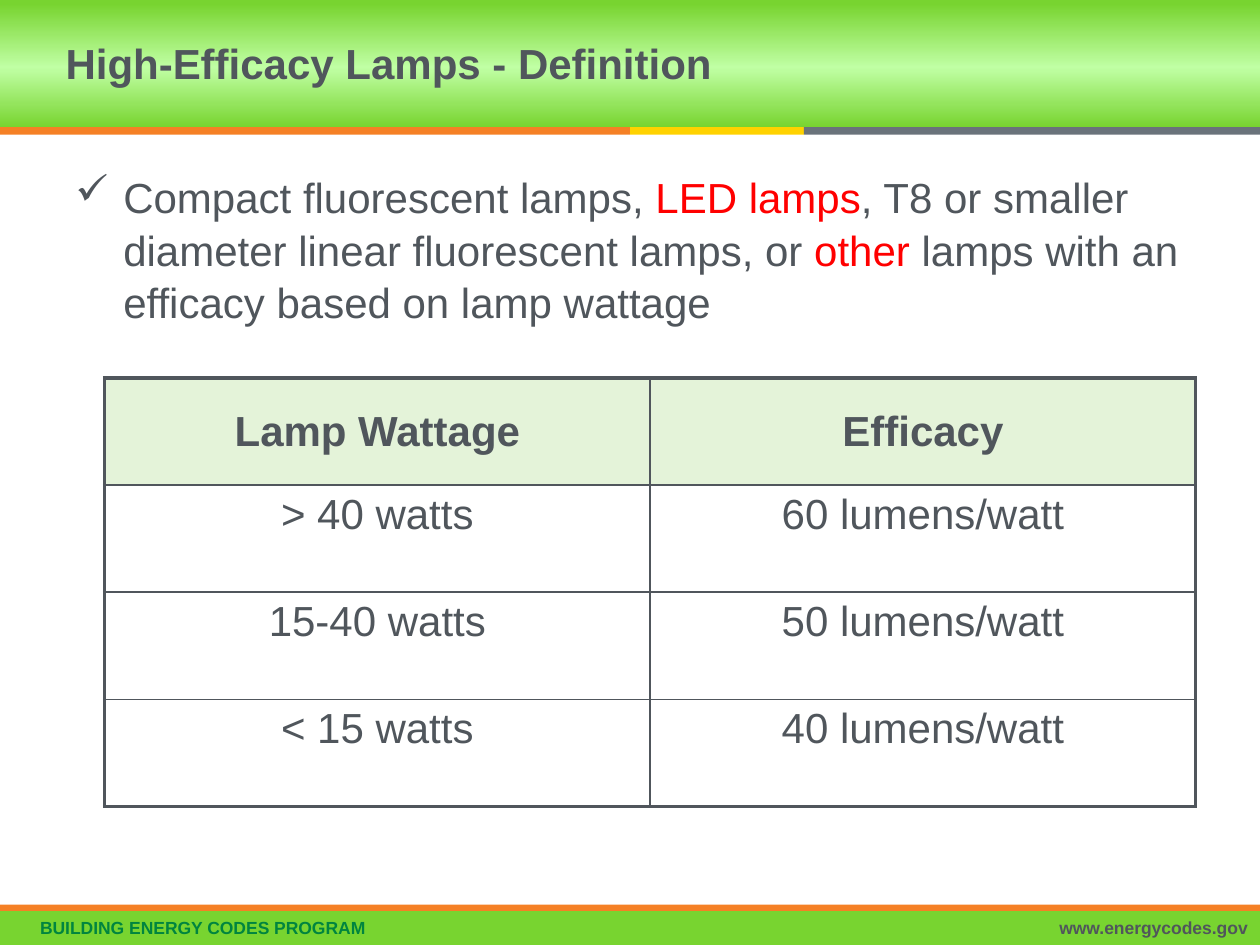
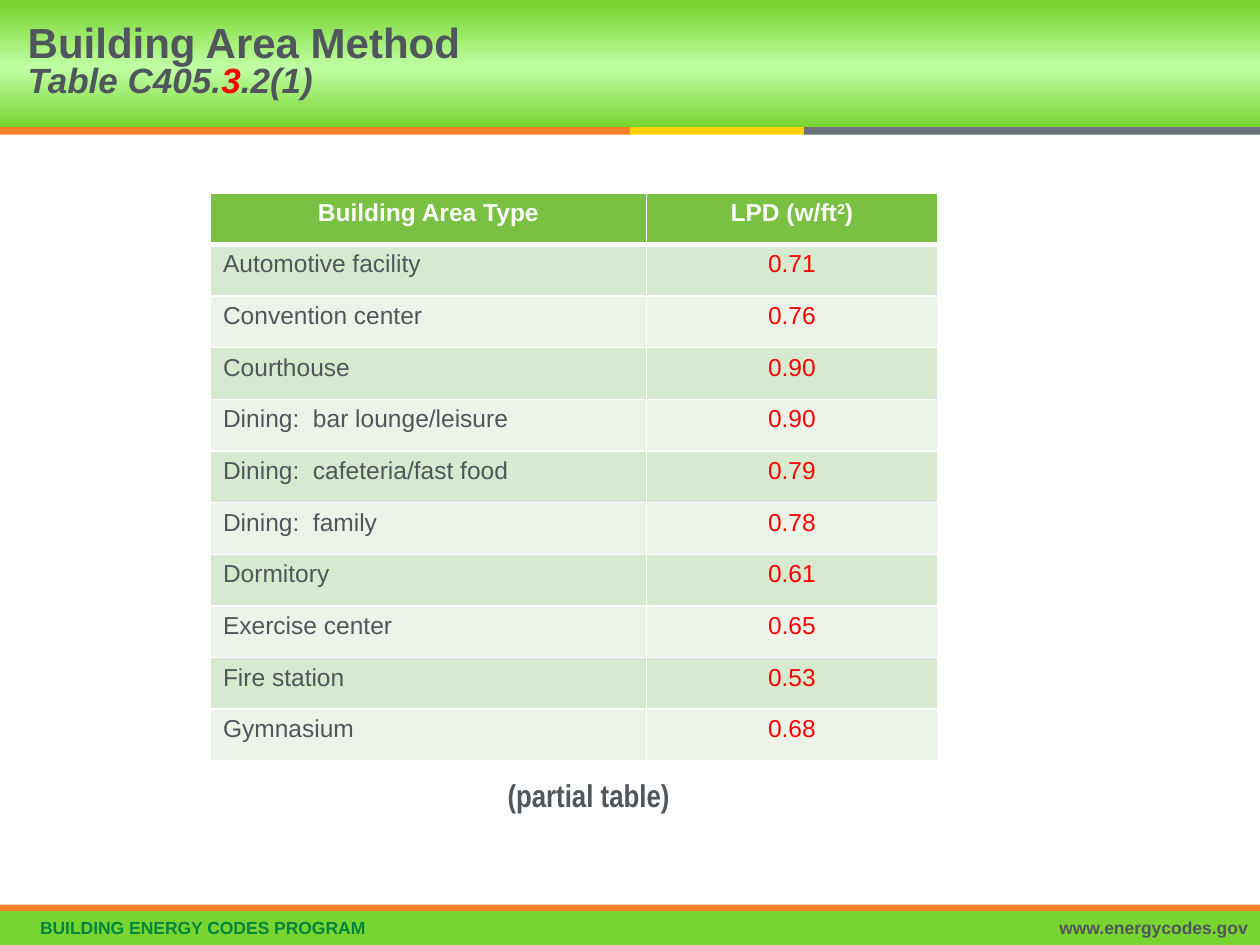
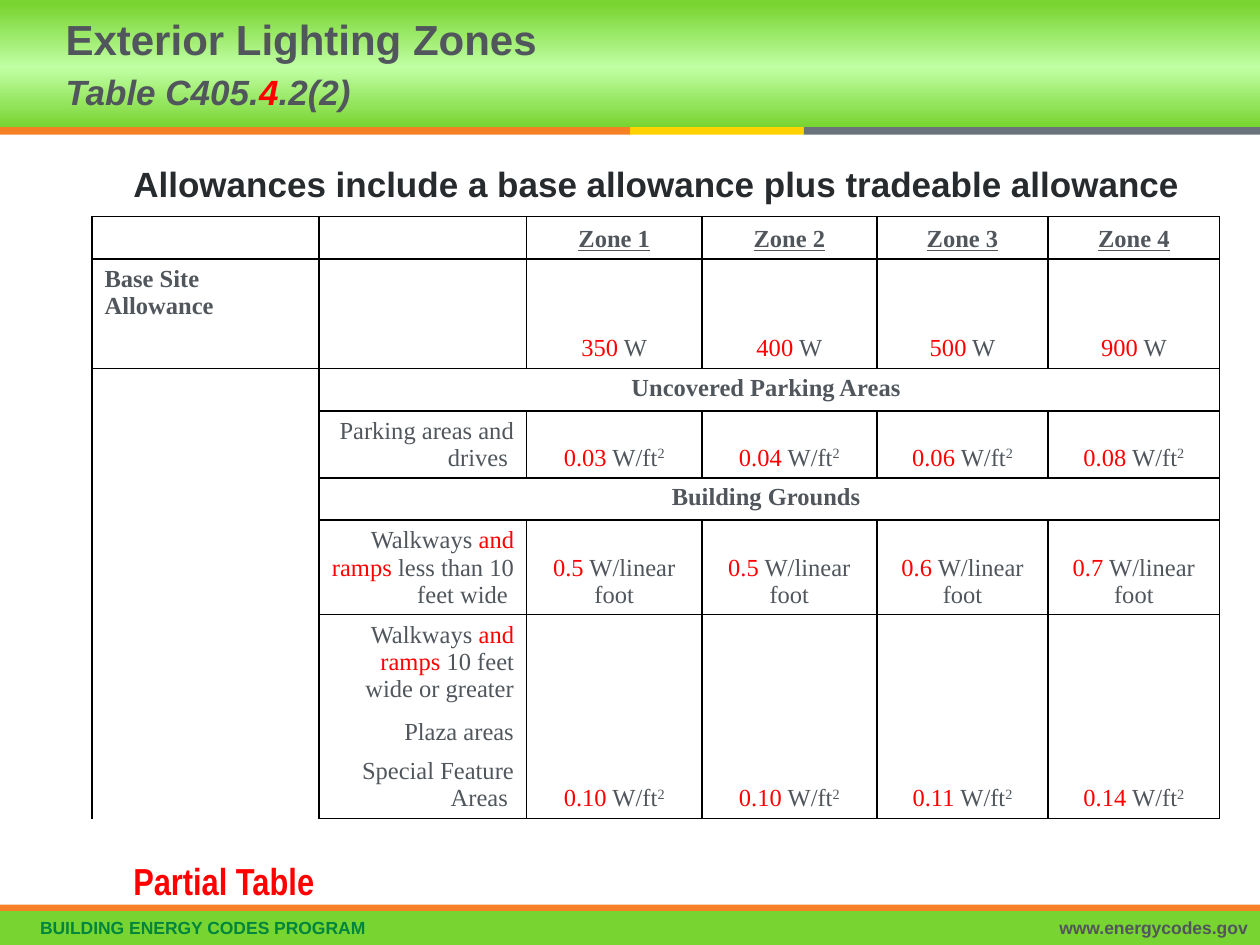
"""Builds three slides on lighting efficacy, power density and exterior zones."""
from copy import deepcopy

from lxml import etree
from pptx import Presentation
from pptx import util as u
from pptx.dml.color import RGBColor
from pptx.enum import shapes, text
from pptx.oxml.ns import qn

GRAY = RGBColor(0x50, 0x56, 0x5C)
DARK = RGBColor(0x28, 0x2B, 0x2E)
RED = RGBColor(0xFF, 0x00, 0x00)
BLACK = RGBColor(0x00, 0x00, 0x00)
WHITE = RGBColor(0xFF, 0xFF, 0xFF)
LIME = RGBColor(0x78, 0xD4, 0x30)
PALE_LIME = RGBColor(0xC0, 0xFF, 0xA4)
GREEN = RGBColor(0x00, 0x85, 0x3F)
ORANGE = RGBColor(0xF5, 0x80, 0x25)
YELLOW = RGBColor(0xFF, 0xD2, 0x00)
SLATE = RGBColor(0x6A, 0x73, 0x7B)
HEAD_PALE = RGBColor(0xE4, 0xF3, 0xD9)
HEAD_GREEN = RGBColor(0x7A, 0xC1, 0x43)
STRIPES = (RGBColor(0xEC, 0xF4, 0xE9), RGBColor(0xD7, 0xE9, 0xCF))

LEFT, CENTER, RIGHT = text.PP_ALIGN.LEFT, text.PP_ALIGN.CENTER, text.PP_ALIGN.RIGHT
TOP, MIDDLE, BOTTOM = text.MSO_ANCHOR.TOP, text.MSO_ANCHOR.MIDDLE, text.MSO_ANCHOR.BOTTOM
RAISED_2 = ("2", {"raised": True})


def red(words):
    return words, {"color": RED}


class Deck:
    """Holds the shared style and the current slide."""

    def __init__(self):
        self.prs = Presentation()
        self.prs.slide_width, self.prs.slide_height = u.Inches(10), u.Inches(7.5)
        self.s = None

    def slide(self, lines, left, width, spacing):
        self.s = self.prs.slides.add_slide(self.prs.slide_layouts[5])
        self.bands()
        title = self.s.shapes.title
        title.element.getparent().append(title.element)
        title.left, title.top = u.Inches(left), u.Inches(0)
        title.width, title.height = u.Inches(width), u.Inches(1.01)
        tf = title.text_frame
        tf.word_wrap, tf.vertical_anchor = True, MIDDLE
        tf.auto_size = text.MSO_AUTO_SIZE.NONE
        for i, runs in enumerate(lines):
            p = tf.add_paragraph() if i else tf.paragraphs[0]
            self.add_runs(p, runs, spacing=spacing, bold=True,
                          size=20 if i else 24, italic=bool(i))

    def bands(self):
        self.gradient(self.rect(0, 0, 10, 1.01, LIME))
        self.rect(0, 7.23, 10, 0.27, LIME)
        self.rect(0, 7.18, 10, 0.05, ORANGE)
        for left, width, color in ((0, 5, ORANGE), (5, 1.38, YELLOW), (6.38, 3.62, SLATE)):
            self.rect(left, 1.01, width, 0.06, color)
        footer = {"size": 10, "bold": True, "spacing": 0.9}
        self.box(0.22, 7.25, 5.5, 0.25, ["BUILDING ENERGY CODES PROGRAM"],
                 color=GREEN, **footer)
        self.box(5.99, 7.25, 4.01, 0.25, ["www.energycodes.gov"], align=RIGHT, **footer)

    def rect(self, left, top, width, height, color):
        sp = self.s.shapes.add_shape(shapes.MSO_SHAPE.RECTANGLE, u.Inches(left),
                                     u.Inches(top), u.Inches(width), u.Inches(height))
        sp.shadow.inherit = False
        sp.fill.solid()
        sp.fill.fore_color.rgb = color
        sp.line.fill.background()
        return sp

    def gradient(self, sp):
        sp.fill.gradient()
        sp.fill.gradient_angle = 90
        stops = sp.element.find(".//" + qn("a:gsLst"))
        stops.append(deepcopy(stops[0]))
        marks = ((0, LIME), (0.47, PALE_LIME), (0.97, LIME))
        for stop, (position, color) in zip(sp.fill.gradient_stops, marks):
            stop.position, stop.color.rgb = position, color

    def box(self, left, top, width, height, runs, bullet=None, **look):
        sp = self.s.shapes.add_textbox(u.Inches(left), u.Inches(top),
                                       u.Inches(width), u.Inches(height))
        tf = sp.text_frame
        tf.word_wrap = True
        p = tf.paragraphs[0]
        if bullet:
            pPr = p._p.get_or_add_pPr()
            pPr.set("marL", str(u.Inches(0.38)))
            pPr.set("indent", str(-u.Inches(0.38)))
            etree.SubElement(pPr, qn("a:buChar"), char=bullet)
        self.add_runs(p, runs, **look)

    def add_runs(self, p, runs, align=LEFT, spacing=None, **look):
        p.alignment = align
        if spacing:
            p.line_spacing = spacing
        base = {"size": 14, "name": "Arial", "color": GRAY, "bold": False}
        for run in runs:
            words, own = run if isinstance(run, tuple) else (run, {})
            style = base | look | own
            r = p.add_run()
            r.text = words
            r.font.size, r.font.name = u.Pt(style["size"]), style["name"]
            r.font.color.rgb, r.font.bold = style["color"], style["bold"]
            r.font.italic = style.get("italic", False)
            r.font.underline = style.get("underline", False)
            if "raised" in style:
                r._r.get_or_add_rPr().set("baseline", "30000")

    def table(self, left, top, cols, rows):
        frame = self.s.shapes.add_table(len(rows), len(cols), u.Inches(left), u.Inches(top),
                                        u.Inches(sum(cols)), u.Inches(sum(rows)))
        t = frame.table
        t.first_row = t.horz_banding = False
        for col, width in zip(t.columns, cols):
            col.width = u.Inches(width)
        for row, height in zip(t.rows, rows):
            row.height = u.Inches(height)
        return t

    def cell(self, cell, runs, borders, edge, fill=None, anchor=TOP, **look):
        tcPr = cell._tc.get_or_add_tcPr()
        for side in "LRTB":
            width = borders.get(side)
            ln = etree.SubElement(tcPr, qn(f"a:ln{side}"), w=str(u.Pt(width or 1)))
            if width:
                solid = etree.SubElement(ln, qn("a:solidFill"))
                etree.SubElement(solid, qn("a:srgbClr"), val=str(edge))
            else:
                etree.SubElement(ln, qn("a:noFill"))
        if fill is None:
            cell.fill.background()
        else:
            cell.fill.solid()
            cell.fill.fore_color.rgb = fill
        cell.vertical_anchor = anchor
        p = cell.text_frame.paragraphs[0]
        if runs:
            self.add_runs(p, runs, **look)
        else:
            etree.SubElement(p._p, qn("a:endParaRPr"), sz="1400")


def lamps(deck):
    deck.slide([["High-Efficacy Lamps - Definition"]], 0.42, 5.97, u.Pt(28))
    deck.box(0.5, 1.29, 9.11, 1.6,
             ["Compact fluorescent lamps, ", red("LED lamps"),
              ", T8 or smaller diameter linear fluorescent lamps, or ", red("other"),
              " lamps with an efficacy based on lamp wattage"],
             bullet="✓", size=24, spacing=1.05)
    rows = (("Lamp Wattage", "Efficacy"), ("> 40 watts", "60 lumens/watt"),
            ("15-40 watts", "50 lumens/watt"), ("< 15 watts", "40 lumens/watt"))
    t = deck.table(0.83, 3, [4.33] * 2, [0.85] * 4)
    for i, row in enumerate(rows):
        head = i == 0
        for j, words in enumerate(row):
            outer = {"L": j == 0, "R": j == 1, "T": head, "B": i == 3}
            borders = {side: 2.25 if is_outer else 1 for side, is_outer in outer.items()}
            deck.cell(t.cell(i, j), [words], borders, GRAY, HEAD_PALE if head else None,
                      MIDDLE if head else TOP, align=CENTER, size=24, bold=head)


def building_areas(deck):
    deck.slide([["Building Area Method"], ["Table C405.", red("3"), ".2(1)"]],
               0.12, 6.66, 0.8)
    areas = (("Automotive facility", "0.71"), ("Convention center", "0.76"),
             ("Courthouse", "0.90"), ("Dining:  bar lounge/leisure", "0.90"),
             ("Dining:  cafeteria/fast food", "0.79"), ("Dining:  family", "0.78"),
             ("Dormitory", "0.61"), ("Exercise center", "0.65"),
             ("Fire station", "0.53"), ("Gymnasium", "0.68"))
    t = deck.table(1.67, 1.53, [3.46, 2.31], [0.41] * 11)
    thin = dict.fromkeys("LRTB", 1)
    for j, runs in enumerate((["Building Area Type"], ["LPD (w/ft", RAISED_2, ")"])):
        deck.cell(t.cell(0, j), runs, thin | {"B": 3}, WHITE, HEAD_GREEN,
                  align=CENTER, bold=True, color=WHITE)
    for i, (area, density) in enumerate(areas, 1):
        borders = thin | {"T": 3 if i == 1 else 1}
        deck.cell(t.cell(i, 0), [area], borders, WHITE, STRIPES[i % 2])
        deck.cell(t.cell(i, 1), [red(density)], borders, WHITE, STRIPES[i % 2], align=CENTER)
    deck.box(3.93, 6.17, 3.2, 0.35, ["(partial table)"], size=18, name="Arial Narrow",
             bold=True, spacing=0.8)


def zone_sides(i, j):
    if j == 0 and i > 0:
        return {1: "LRT", 2: "LRB", 3: "LRT"}.get(i, "LR")
    if j == 1 and i > 6:
        return {7: "LRT", 8: "LR", 9: "LRB"}[i]
    return "LRTB"


def zones(deck):
    deck.slide([["Exterior Lighting Zones"], ["Table C405.", red("4"), ".2(2)"]],
               0.42, 5.97, u.Pt(28))
    t = deck.table(0.73, 1.72, [1.8, 1.65, 1.39, 1.39, 1.36, 1.36],
                   [0.32, 0.53, 0.32, 0.32, 0.53, 0.32, 0.75, 0.75, 0.32, 0.53])
    for j in range(1, 6):
        t.cell(1, j).merge(t.cell(2, j))
    for j in range(2, 6):
        t.cell(7, j).merge(t.cell(9, j))
    for i in (3, 5):
        t.cell(i, 1).merge(t.cell(i, 5))

    label = {"align": RIGHT, "anchor": BOTTOM}
    section = {"align": CENTER, "bold": True}
    content = {
        (1, 0): (["Base Site Allowance"], {"bold": True}),
        (3, 1): (["Uncovered Parking Areas "], section),
        (4, 1): (["Parking areas and drives "], label),
        (5, 1): (["Building Grounds "], section),
        (6, 1): (["Walkways ", red("and ramps "), "less than 10 feet wide "], label),
        (7, 1): (["Walkways ", red("and ramps"), " 10 feet wide or greater"], label),
        (8, 1): (["Plaza areas"], label),
        (9, 1): (["Special Feature Areas "], label),
    }
    value = {"align": CENTER, "anchor": BOTTOM}
    for j in range(2, 6):
        content[0, j] = [f"Zone {j - 1}"], value | {"bold": True, "underline": True}
    square_foot = [" W/ft", RAISED_2]
    allowances = ((1, ("350", "400", "500", "900"), [" W"]),
                  (4, ("0.03", "0.04", "0.06", "0.08"), square_foot),
                  (6, ("0.5", "0.5", "0.6", "0.7"), [" W/linear foot"]),
                  (7, ("0.10", "0.10", "0.11", "0.14"), square_foot))
    for i, amounts, unit in allowances:
        for j, amount in enumerate(amounts, 2):
            content[i, j] = [red(amount)] + unit, value
    for i in range(10):
        for j in range(6):
            runs, look = content.get((i, j), ([], {}))
            deck.cell(t.cell(i, j), runs, dict.fromkeys(zone_sides(i, j), 1), BLACK,
                      name="Times New Roman", **look)
    deck.box(0.96, 1.24, 8.6, 0.43,
             ["Allowances include a base allowance plus tradeable allowance"],
             size=20, bold=True, color=DARK)
    deck.box(0.96, 6.83, 2.44, 0.4, [red("Partial Table")], size=21.5,
             name="Arial Narrow", bold=True, spacing=0.8)


def main():
    deck = Deck()
    for build in (lamps, building_areas, zones):
        build(deck)
    deck.prs.save("out.pptx")


if __name__ == "__main__":
    main()
